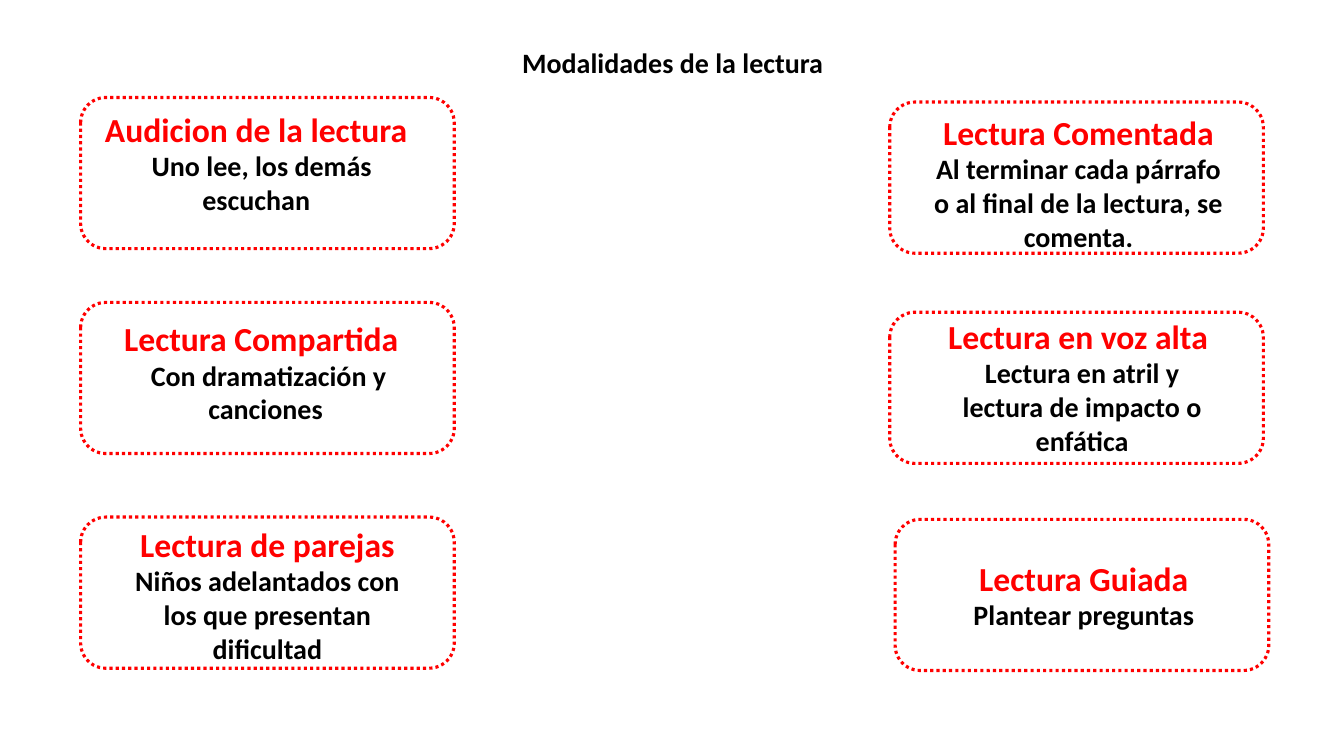
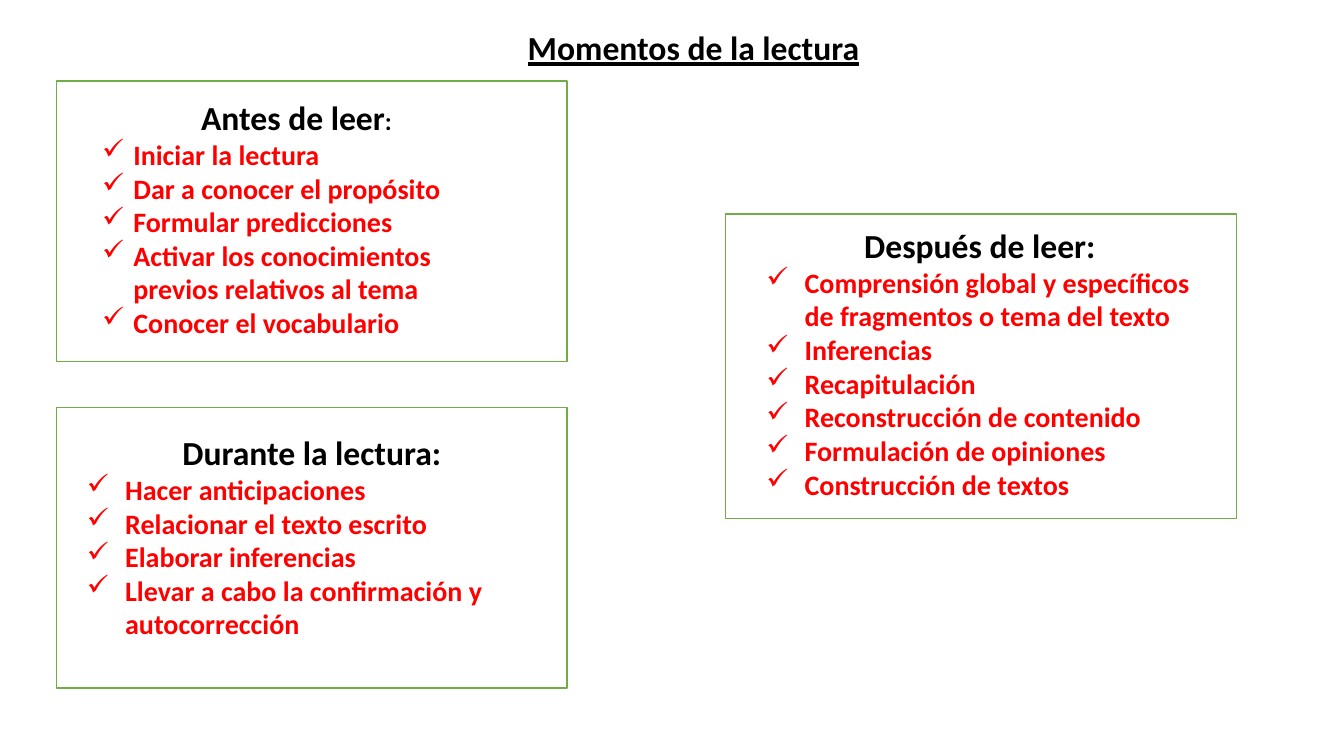
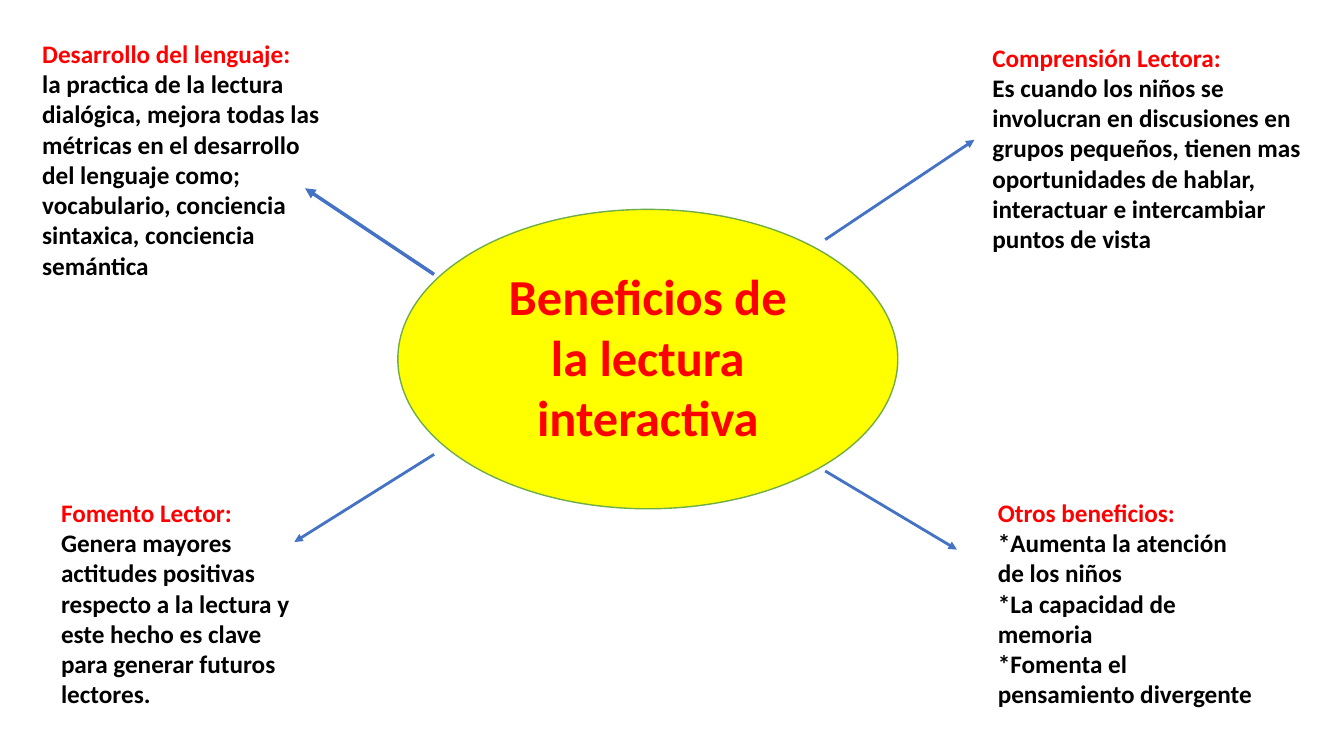
from lxml import etree
from pptx import Presentation
from pptx.dml.color import RGBColor
from pptx.enum.dml import MSO_LINE
from pptx.enum.shapes import MSO_CONNECTOR, MSO_SHAPE
from pptx.enum.text import MSO_ANCHOR, MSO_AUTO_SIZE, PP_ALIGN
from pptx.oxml.ns import qn
from pptx.util import Inches, Pt

DOT = MSO_LINE.ROUND_DOT
STRAIGHT = MSO_CONNECTOR.STRAIGHT
ROUND, RECT, OVAL = MSO_SHAPE.ROUNDED_RECTANGLE, MSO_SHAPE.RECTANGLE, MSO_SHAPE.OVAL
TOP, FIXED = MSO_ANCHOR.TOP, MSO_AUTO_SIZE.NONE
LEFT, MID = PP_ALIGN.LEFT, PP_ALIGN.CENTER

FONT = "Calibri"
BLACK, WHITE, RED = "000000", "FFFFFF", "FF0000"
GREEN, BLUE, YELLOW = "70AD47", "4472C4", "FFFF00"
WIDE, HIGH = 13.33, 7.5
TITLE_ONLY = 5

# Boxes are (left, top, width, height) in percent of the slide.
CARD_W, CARD_H = 27.8, 20
# Per card: corner, text box as shares of the card, heading, its alignment,
# body, first-line indent of the body in inches
CARDS = [
    ((6, 12.9), (0, 0.04, 0.94, 0.79), "Audicion de la lectura", MID,
     "Uno lee, los demás escuchan", 0.11),
    ((6, 40), (0.09, 0.07, 0.81, 1.05), "Lectura Compartida", LEFT,
     "Con dramatización y canciones", 0.06),
    ((6, 68.4), (0.11, 0.01, 0.78, 1.01), "Lectura de parejas", MID,
     "Niños adelantados con los que presentan dificultad", 0),
    ((66.2, 13.5), (0.08, 0.03, 0.85, 1.23), "Lectura Comentada", MID,
     "Al terminar cada párrafo o al final de la lectura, se comenta.", 0),
    ((66.2, 41.3), (0.13, -0.01, 0.77, 1.01), "Lectura en voz alta", LEFT,
     "Lectura en atril y lectura de impacto o enfática", 0),
    ((66.6, 68.7), (0.08, 0.22, 0.85, 0.56), "Lectura Guiada", MID,
     "Plantear preguntas", 0),
]

# Per panel: box, text box as shares of the panel, heading runs, hang, items
PANELS = [
    ((4.2, 10.7, 38, 37.1), (0.07, 0.04, 0.8, 0.91),
     [("Antes de leer", 24), (":", 18)], 0.31,
     ["Iniciar la lectura", "Dar a conocer el propósito", "Formular predicciones",
      "Activar los conocimientos previos relativos al tema",
      "Conocer el vocabulario"]),
    ((4.2, 53.9, 38, 37.1), (0.04, 0.07, 0.92, 0.93),
     [("Durante la lectura:", 24)], 0.38,
     ["Hacer anticipaciones", "Relacionar el texto escrito", "Elaborar inferencias",
      "Llevar a cabo la confirmación y autocorrección"]),
    ((54, 28.3, 38, 40.3), (0.06, 0.02, 0.89, 0.95),
     [("Después de leer: ", 24)], 0.38,
     ["Comprensión global y específicos de fragmentos o tema del texto",
      "Inferencias", "Recapitulación", "Reconstrucción de contenido",
      "Formulación de opiniones", "Construcción de textos"]),
]

HUB = (29.6, 27.7, 37.2, 39.6)
# Per arrow: start, end, width in points
ARROWS = [
    ((32.3, 36.3), (22.7, 24.9), 2.5),
    ((61.4, 31.7), (72.5, 18.5), 2),
    ((61.4, 62.3), (71.2, 72.7), 2),
    ((32.3, 60.1), (21.9, 71.7), 2),
]
NOTES = [
    ((2.4, 4.4, 23.4, 33.6), "Desarrollo del lenguaje:",
     ["la practica de la lectura dialógica, mejora todas las métricas en el "
      "desarrollo del lenguaje como; vocabulario, conciencia sintaxica, "
      "conciencia semántica"]),
    ((73.1, 4.9, 24.9, 29.6), "Comprensión Lectora:",
     ["Es cuando los niños se involucran en discusiones en grupos pequeños, "
      "tienen mas oportunidades de hablar, interactuar e intercambiar puntos "
      "de vista"]),
    ((3.8, 65.1, 20.1, 29.6), "Fomento Lector:",
     ["Genera mayores actitudes positivas respecto a la lectura y este hecho "
      "es clave para generar futuros lectores."]),
    ((73.5, 65.1, 20.7, 29.6), "Otros beneficios:",
     ["*Aumenta la atención", "de los niños", "*La capacidad de memoria",
      "*Fomenta el pensamiento divergente"]),
]


def rgb(tint):
    return RGBColor.from_string(tint)


def across(share):
    return Inches(WIDE * share / 100)


def down(share):
    return Inches(HIGH * share / 100)


def place(box):
    x, y, w, h = box
    return across(x), down(y), across(w), down(h)


def inside(box, part):
    """Turn shares of a box into a box on the slide."""
    x, y, w, h = box
    px, py, pw, ph = part
    return x + w * px, y + h * py, w * pw, h * ph


def para(frame, runs, tint, align=LEFT):
    """Fill the first empty paragraph, or a new one, with (text, size) runs."""
    line = frame.paragraphs[-1]
    if line.runs:
        line = frame.add_paragraph()
    line.alignment = align
    for text, size in runs:
        run = line.add_run()
        run.text = text
        run.font.name = FONT
        run.font.size = Pt(size)
        run.font.bold = True
        run.font.color.rgb = rgb(tint)
    return line


def indent(line, first, left=0):
    props = line._p.get_or_add_pPr()
    props.set("marL", str(Inches(left)))
    props.set("indent", str(Inches(first)))
    return props


def check(line, hang):
    """Give a paragraph a hanging check mark."""
    props = indent(line, -hang, hang)
    etree.SubElement(props, qn("a:buChar")).set("char", "✓")


def label(slide, box):
    frame = slide.shapes.add_textbox(*place(box)).text_frame
    frame.word_wrap = True
    return frame


def outline(slide, kind, box, fill, edge, width):
    shape = slide.shapes.add_shape(kind, *place(box))
    shape.shadow.inherit = False
    shape.fill.solid()
    shape.fill.fore_color.rgb = rgb(fill)
    shape.line.color.rgb = rgb(edge)
    shape.line.width = Pt(width)
    return shape


def start(deck, box, text, size, tint=BLACK):
    """Add a slide with its title set in the box."""
    slide = deck.slides.add_slide(deck.slide_layouts[TITLE_ONLY])
    title = slide.shapes.title
    title.left, title.top, title.width, title.height = place(box)
    frame = title.text_frame
    frame.word_wrap = True
    frame.auto_size = FIXED
    frame.vertical_anchor = TOP
    line = para(frame, [(text, size)], tint, MID)
    return slide, line.runs[0]


def card(slide, corner, part, head, align, body, first):
    box = (*corner, CARD_W, CARD_H)
    outline(slide, ROUND, box, WHITE, RED, 2.25).line.dash_style = DOT
    frame = label(slide, inside(box, part))
    para(frame, [(head, 24)], RED, align)
    indent(para(frame, [(body, 20)], BLACK, MID), first)


def panel(slide, box, part, head, hang, items):
    outline(slide, RECT, box, WHITE, GREEN, 1)
    frame = label(slide, inside(box, part))
    para(frame, head, BLACK, MID)
    for item in items:
        check(para(frame, [(item, 20)], RED), hang)


def arrow(slide, tail, tip, width):
    line = slide.shapes.add_connector(
        STRAIGHT, across(tail[0]), down(tail[1]), across(tip[0]), down(tip[1]))
    line.line.color.rgb = rgb(BLUE)
    line.line.width = Pt(width)
    etree.SubElement(line.line._get_or_add_ln(), qn("a:tailEnd")).set("type", "triangle")
    etree.SubElement(line.element.spPr, qn("a:effectLst"))


def note(slide, box, head, lines):
    frame = label(slide, box)
    para(frame, [(head, 18)], RED)
    for text in lines:
        para(frame, [(text, 18)], BLACK)


def modes(deck):
    slide, _ = start(deck, (7.3, 5.3, 85.5, 14.8), "Modalidades de la lectura", 20)
    for item in CARDS:
        card(slide, *item)


def moments(deck):
    slide, run = start(deck, (10.1, 2.9, 83, 12.1), "Momentos de la lectura", 24)
    run.font.underline = True
    for item in PANELS:
        panel(slide, *item)


def gains(deck):
    slide, _ = start(deck, inside(HUB, (0.2, 0.17, 0.6, 0.65)),
                     "Beneficios de la lectura interactiva", 36, RED)
    outline(slide, OVAL, HUB, YELLOW, GREEN, 1)
    # The title has to lie in front of the ellipse.
    slide.shapes.element.append(slide.shapes.title.element)
    for item in ARROWS:
        arrow(slide, *item)
    for item in NOTES:
        note(slide, *item)


def main():
    deck = Presentation()
    deck.slide_width, deck.slide_height = Inches(WIDE), Inches(HIGH)
    modes(deck)
    moments(deck)
    gains(deck)
    deck.save("out.pptx")


if __name__ == "__main__":
    main()
